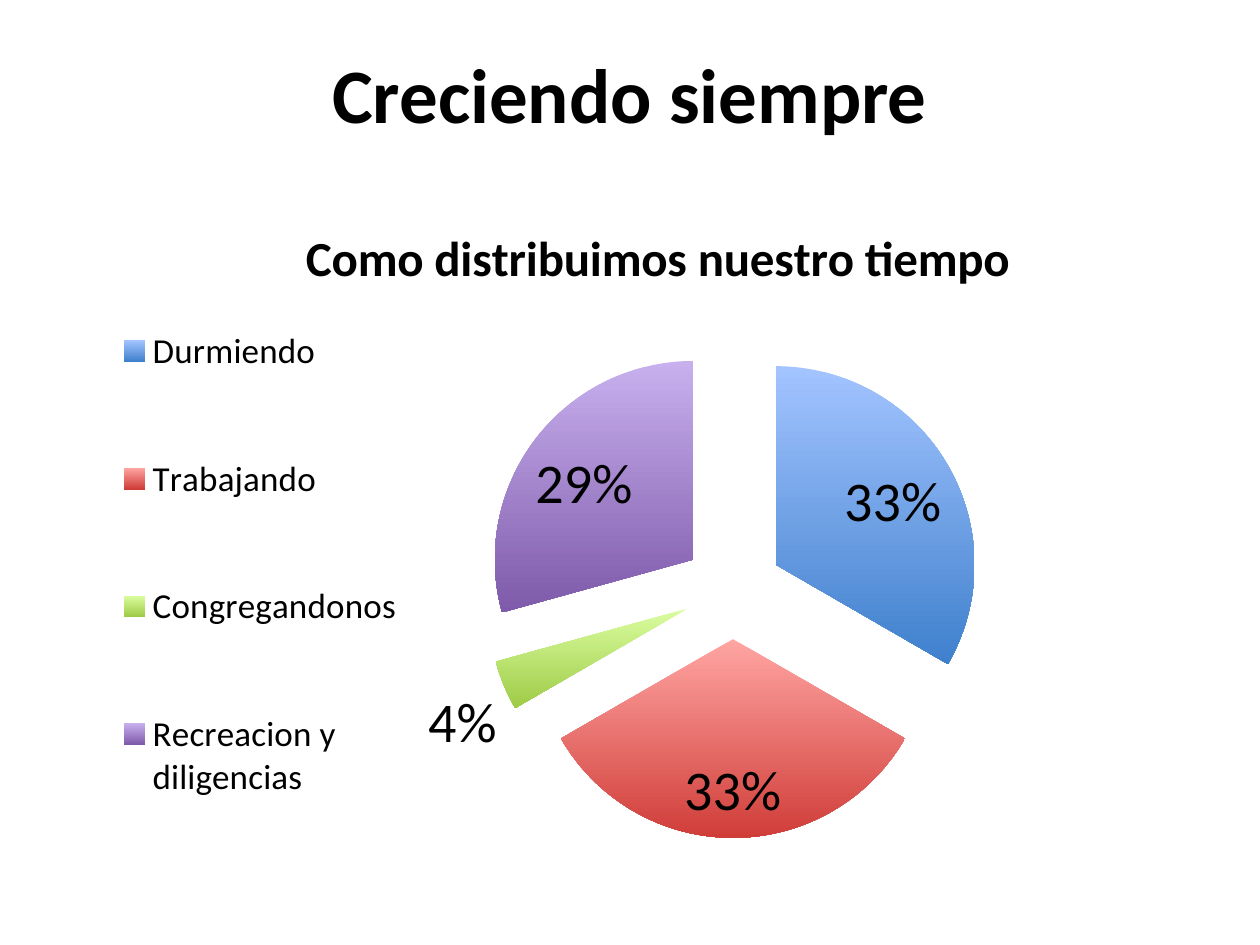
from lxml import etree
from pptx import Presentation
from pptx.chart.data import CategoryChartData
from pptx.dml.color import RGBColor
from pptx.enum.chart import XL_CHART_TYPE, XL_LABEL_POSITION, XL_LEGEND_POSITION
from pptx.enum.text import MSO_ANCHOR, PP_ALIGN
from pptx.oxml import parse_xml
from pptx.oxml.ns import nsdecls, qn
from pptx.util import Inches, Pt

BLACK = RGBColor(0x00, 0x00, 0x00)
GRADIENTS = [
    (RGBColor(0xA3, 0xC4, 0xFF), RGBColor(0x3F, 0x80, 0xCD)),
    (RGBColor(0xFF, 0xA5, 0xA2), RGBColor(0xD0, 0x3D, 0x39)),
    (RGBColor(0xDA, 0xFD, 0xA0), RGBColor(0x9E, 0xCB, 0x46)),
    (RGBColor(0xC8, 0xB0, 0xEE), RGBColor(0x7E, 0x5A, 0xAA)),
]


def set_font(font, size, bold=False):
    font.name = "Calibri"
    font.size = Pt(size)
    font.bold = bold
    font.color.rgb = BLACK


def manual_layout(x, y, w, h, inner=False):
    layout = parse_xml(f"<c:layout {nsdecls('c')}><c:manualLayout/></c:layout>")
    settings = [("layoutTarget", "inner")] if inner else []
    settings += [("xMode", "edge"), ("yMode", "edge"),
                 ("x", x), ("y", y), ("w", w), ("h", h)]
    for tag, value in settings:
        etree.SubElement(layout[0], qn(f"c:{tag}")).set("val", str(value))
    return layout


prs = Presentation()
prs.slide_width = Inches(10)
prs.slide_height = Inches(7.5)
s = prs.slides.add_slide(prs.slide_layouts[5])

title = s.shapes.title
title.left, title.top = Inches(0.5), Inches(0.3)
title.width, title.height = Inches(9), Inches(0.87)
tf = title.text_frame
tf.text = "Creciendo siempre"
tf.vertical_anchor = MSO_ANCHOR.MIDDLE
p = tf.paragraphs[0]
p.alignment = PP_ALIGN.CENTER
set_font(p.font, 44, True)

data = CategoryChartData()
data.categories = ["Durmiendo", "Trabajando", "Congregandonos",
                   "Recreacion y diligencias"]
data.add_series("Series 1", (33, 33, 4, 29))
chart = s.shapes.add_chart(XL_CHART_TYPE.PIE, Inches(0.44), Inches(1.55),
                           Inches(9.56), Inches(5.63), data).chart
set_font(chart.font, 10)

chart.has_title = True
tf = chart.chart_title.text_frame
tf.text = "Como distribuimos nuestro tiempo"
set_font(tf.paragraphs[0].font, 28, True)
chart.chart_title.include_in_layout = False

chart.has_legend = True
legend = chart.legend
legend.position = XL_LEGEND_POSITION.TOP
legend.include_in_layout = False
set_font(legend.font, 20)
legend_xml = legend._element
legend_xml.find(qn("c:legendPos")).addnext(manual_layout(0.04, 0.07, 0.26, 0.9))

plot = chart.plots[0]
plot.vary_by_categories = True
plot_area = plot._element.getparent()
for old in plot_area.findall(qn("c:layout")):
    plot_area.remove(old)
plot_area.insert(0, manual_layout(0.125, 0.206, 0.875, 0.7, inner=True))

series = plot.series[0]
for i, colors in enumerate(GRADIENTS):
    fill = series.points[i].format.fill
    fill.gradient()
    fill.gradient_angle = 270
    for stop, color in zip(fill.gradient_stops, colors):
        stop.color.rgb = color

explosion = parse_xml(f'<c:explosion {nsdecls("c")} val="25"/>')
series._element.find(qn("c:dPt")).addprevious(explosion)

labels = series.data_labels
labels.show_percentage = True
labels.show_value = False
labels.number_format = "0%"
labels.number_format_is_linked = False
labels.position = XL_LABEL_POSITION.BEST_FIT
set_font(labels.font, 32)

prs.save("out.pptx")
